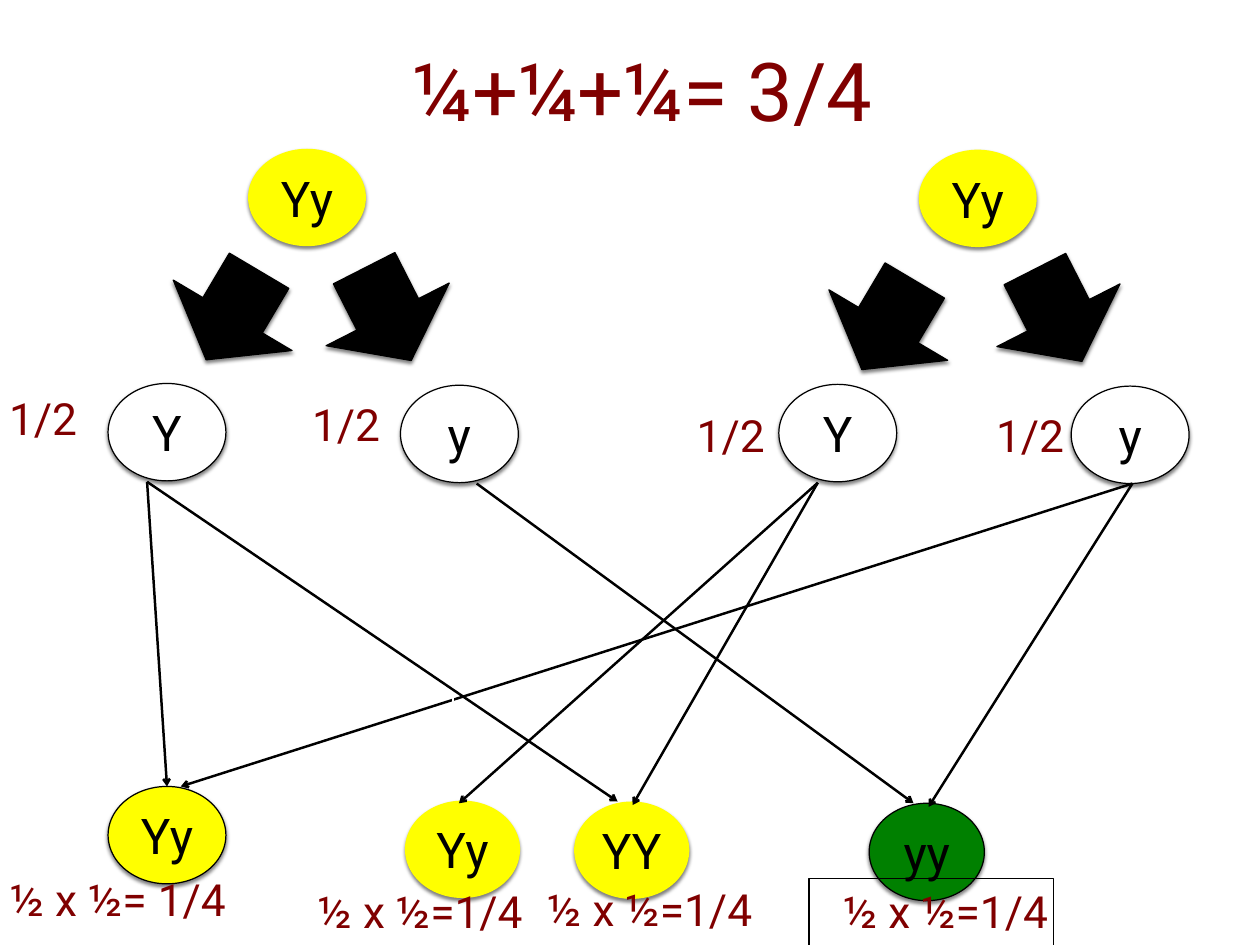
from dataclasses import dataclass
from lxml import etree
from pptx import Presentation
from pptx import util as u
from pptx.dml.color import RGBColor
from pptx.enum import shapes, text
from pptx.oxml import ns


@dataclass(frozen=True)
class Theme:
    font: str = "Roboto"
    black: str = "000000"
    white: str = "FFFFFF"
    yellow: str = "FFFF00"
    green: str = "008000"
    maroon: str = "800000"
    title: int = 66
    gene: int = 40
    odds: int = 36


T = Theme()
TOP = text.MSO_ANCHOR.TOP
MID = text.MSO_ANCHOR.MIDDLE
CENTER = text.PP_ALIGN.CENTER
RIGHT = text.PP_ALIGN.RIGHT


def rgb(color):
    return RGBColor.from_string(color)


def add_tag(parent, name, **attrs):
    return etree.SubElement(parent, ns.qn(name), attrs)


def box(left, top, width, height):
    return [u.Inches(n) for n in (left, top, width, height)]


def put_text(shape, words, size=T.odds, color=T.maroon, align=RIGHT, anchor=MID):
    frame = shape.text_frame
    frame.word_wrap = True
    frame.vertical_anchor = anchor
    frame.margin_left = frame.margin_right = u.Inches(0.06)
    frame.margin_top = frame.margin_bottom = u.Inches(0.06)
    par = frame.paragraphs[0]
    par.text = words
    par.alignment = align
    par.font.size = u.Pt(size)
    par.font.name = T.font
    par.font.color.rgb = rgb(color)


def add_shadow(shape):
    shape.shadow.inherit = False
    effects = shape._element.spPr.find(ns.qn("a:effectLst"))
    outer = add_tag(effects, "a:outerShdw", blurRad=str(u.Pt(3)),
                    dist=str(u.Pt(2)), dir="5400000", rotWithShape="0")
    color = add_tag(outer, "a:srgbClr", val=T.black)
    add_tag(color, "a:alpha", val="50000")


def add_form(slide, kind, place, fill, edge=True):
    shape = slide.shapes.add_shape(kind, *box(*place))
    shape.fill.solid()
    shape.fill.fore_color.rgb = rgb(fill)
    if edge:
        shape.line.color.rgb = rgb(T.black)
        shape.line.width = u.Pt(1)
    else:
        shape.line.fill.background()
    add_shadow(shape)
    return shape


def add_gene(slide, words, left, top, width=1.33, fill=T.white, edge=True):
    oval = add_form(slide, shapes.MSO_SHAPE.OVAL, (left, top, width, 1.1), fill, edge)
    put_text(oval, words, size=T.gene, color=T.black, align=CENTER)
    return oval


def add_split(slide, left, top, angle):
    arrow = add_form(slide, shapes.MSO_SHAPE.RIGHT_ARROW, (left, top, 1.17, 1.56), T.black)
    arrow.rotation = angle


def add_label(slide, words, place, **style):
    put_text(slide.shapes.add_textbox(*box(*place)), words, **style)


def add_frame(slide, words, place, **style):
    frame = slide.shapes.add_shape(shapes.MSO_SHAPE.RECTANGLE, *box(*place))
    frame.shadow.inherit = False
    frame.fill.background()
    frame.line.color.rgb = rgb(T.black)
    frame.line.width = u.Pt(1)
    put_text(frame, words, **style)


def add_line(slide, start, end, color=T.black):
    line = slide.shapes.add_connector(shapes.MSO_CONNECTOR.STRAIGHT, *box(*start, *end))
    line.line.color.rgb = rgb(color)
    line.line.width = u.Pt(2)
    add_tag(line.line._get_or_add_ln(), "a:tailEnd", type="arrow")
    add_tag(line._element.spPr, "a:effectLst")
    return line


def add_parent(slide, left, top, split):
    add_gene(slide, "Yy", left + 1.58, top, fill=T.yellow, edge=False)
    add_gene(slide, "Y", left, top + 2.65)
    add_gene(slide, "y", left + 3.3, top + 2.67)
    add_split(slide, left + 2.57, top + 1.09, 63)
    add_split(slide, *split, 120.7)


def main():
    deck = Presentation()
    deck.slide_width = u.Inches(14.22)
    deck.slide_height = u.Inches(10.67)
    slide = deck.slides.add_slide(deck.slide_layouts[6])

    add_parent(slide, 1.22, 1.68, (2.04, 2.78))
    add_parent(slide, 8.79, 1.69, (9.44, 2.89))

    first = add_gene(slide, "Yy", 1.22, 8.88, fill=T.yellow)
    add_gene(slide, "Yy", 4.57, 9.04, width=1.3, fill=T.yellow, edge=False)
    add_gene(slide, "YY", 6.48, 9.05, width=1.3, fill=T.yellow, edge=False)
    add_gene(slide, "yy", 9.81, 9.07, width=1.3, fill=T.green)

    left_big, left_small = (1.66, 5.44), (5.38, 5.46)
    right_big, right_small = (9.23, 5.45), (12.78, 5.46)
    add_line(slide, left_big, (1.88, 8.88)).end_connect(first, 0)
    add_line(slide, right_small, (2.04, 8.88))
    add_line(slide, (5.11, 6.42), (5.11, 9.04), color=T.white)
    for start, end in (
        (right_big, (5.18, 9.07)),
        (left_big, (6.97, 9.05)),
        (right_big, (7.14, 9.09)),
        (left_small, (10.31, 9.07)),
        (right_small, (10.48, 9.11)),
    ):
        add_line(slide, start, end)

    add_label(slide, "¼+¼+¼= 3/4", (3.97, 0.4, 5.94, 1.22), size=T.title)
    for left, top in ((-0.02, 4.36), (3.4, 4.43), (7.74, 4.55), (11.12, 4.55)):
        add_label(slide, "1/2", (left, top, 0.95, 0.72))
    add_label(slide, "½ x ½= 1/4", (-0.12, 9.79, 2.73, 0.72))
    for left, top in ((3.2, 9.92), (5.79, 9.9)):
        add_label(slide, "½ x ½=1/4", (left, top, 2.76, 0.72), anchor=TOP)
    add_frame(slide, "½ x ½=1/4", (9.13, 9.92, 2.76, 1.32), anchor=TOP)

    deck.save("out.pptx")


if __name__ == "__main__":
    main()
